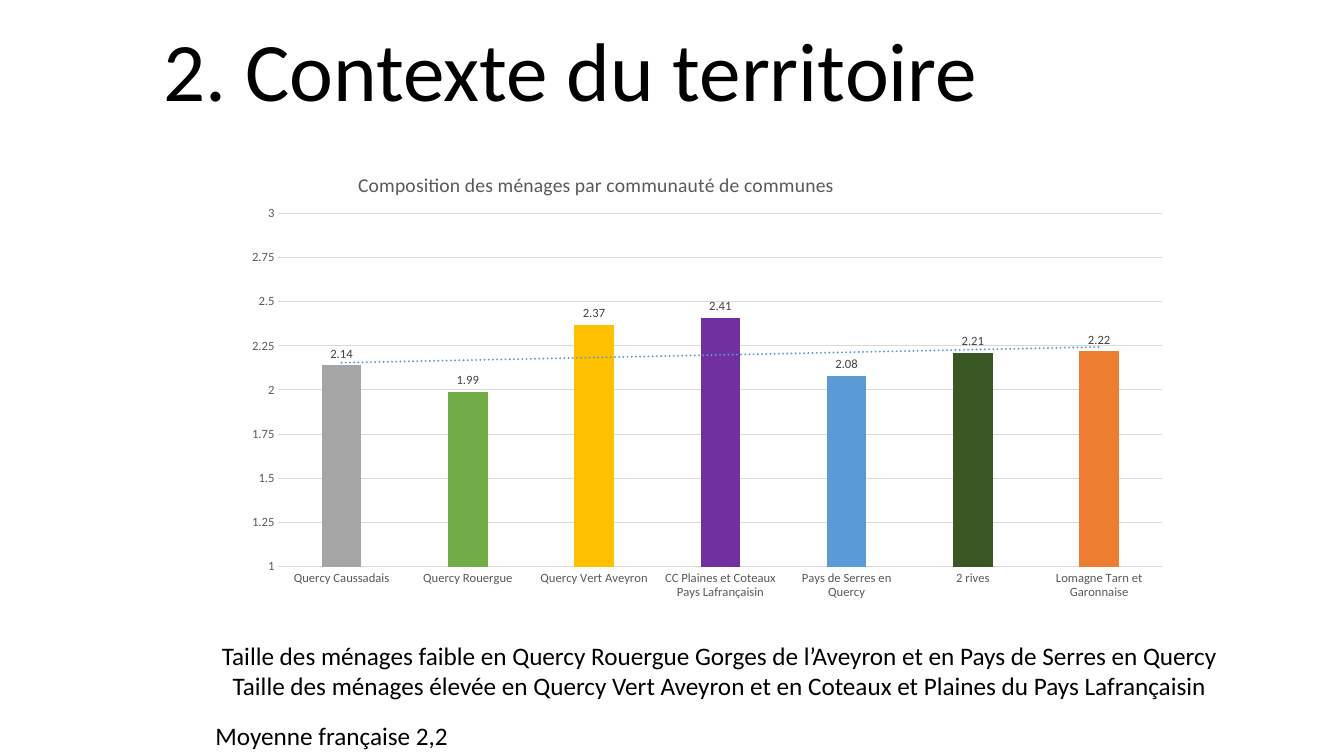
from lxml import etree
from pptx import Presentation
from pptx.chart.data import CategoryChartData
from pptx.dml.color import RGBColor
from pptx.enum.chart import XL_CHART_TYPE, XL_LABEL_POSITION, XL_TICK_MARK
from pptx.enum.text import MSO_ANCHOR, MSO_AUTO_SIZE, PP_ALIGN
from pptx.oxml import parse_xml
from pptx.oxml.ns import nsdecls, qn
from pptx.util import Cm, Pt

COLUMNS = XL_CHART_TYPE.COLUMN_CLUSTERED
OUTSIDE_END = XL_LABEL_POSITION.OUTSIDE_END
NO_TICK = XL_TICK_MARK.NONE
MIDDLE = MSO_ANCHOR.MIDDLE
NO_FIT = MSO_AUTO_SIZE.NONE
LEFT, CENTER = PP_ALIGN.LEFT, PP_ALIGN.CENTER

FONT = "Calibri"
BLACK, AXIS_TEXT, LABEL_TEXT, GRID, TREND = "000000", "595959", "404040", "D9D9D9", "5B9BD5"

TITLE = "2. Contexte du territoire"
CHART_TITLE = "Composition des ménages par communauté de communes"
HOUSEHOLDS = [
    ("Quercy Caussadais", 2.14, "A5A5A5"),
    ("Quercy Rouergue", 1.99, "70AD47"),
    ("Quercy Vert Aveyron", 2.37, "FFC000"),
    ("CC Plaines et Coteaux Pays Lafrançaisin", 2.41, "7030A0"),
    ("Pays de Serres en Quercy", 2.08, "5B9BD5"),
    ("2 rives", 2.21, "385723"),
    ("Lomagne Tarn et Garonnaise", 2.22, "ED7D31"),
]
FINDINGS = [
    "Taille des ménages faible en Quercy Rouergue Gorges de l’Aveyron et en Pays de Serres en Quercy",
    "Taille des ménages élevée en Quercy Vert Aveyron et en Coteaux et Plaines du Pays Lafrançaisin",
]
AVERAGE = ["Moyenne française 2,2"]

TITLE_BOX = (3.86, 0.56, 21.67, 2.64)
CHART_BOX = (5.82, 3.76, 23.95, 11.56)
FINDINGS_BOX = (4.19, 16, 28.19, 1.8)
AVERAGE_BOX = (5.18, 18.03, 6.48, 1.02)
TITLE_LAYOUT = {"x": 0.13, "y": 0.04}
PLOT_LAYOUT = {"x": 0.05, "y": 0.14, "w": 0.93, "h": 0.77}


def color(value):
    return RGBColor.from_string(value)


def lengths(box):
    return [Cm(value) for value in box]


def style_font(font, size, value):
    font.name, font.size, font.bold = FONT, Pt(size), False
    font.color.rgb = color(value)


def style_line(line, value):
    line.color.rgb = color(value)
    line.width = Pt(0.75)


def manual_layout(places, inner=False):
    layout = parse_xml(f"<c:layout {nsdecls('c')}><c:manualLayout/></c:layout>")
    settings = {"layoutTarget": "inner"} if inner else {}
    settings.update(xMode="edge", yMode="edge", **places)
    for name, value in settings.items():
        etree.SubElement(layout[0], qn(f"c:{name}")).set("val", str(value))
    return layout


def drop_layout(element):
    for layout in element.findall(qn("c:layout")):
        element.remove(layout)


def add_text(slide, box, lines, alignment):
    shape = slide.shapes.add_textbox(*lengths(box))
    frame = shape.text_frame
    frame.word_wrap = True
    frame.text = "\n".join(lines)
    for paragraph in frame.paragraphs:
        paragraph.alignment = alignment
        style_font(paragraph.font, 18, BLACK)
    return frame


def add_title(slide):
    title = slide.shapes.title
    title.left, title.top, title.width, title.height = lengths(TITLE_BOX)
    frame = title.text_frame
    frame.text = TITLE
    frame.auto_size = NO_FIT
    frame.vertical_anchor = MIDDLE
    paragraph = frame.paragraphs[0]
    paragraph.alignment = LEFT
    paragraph.line_spacing = 0.9
    style_font(paragraph.font, 59.4, BLACK)


def style_axes(chart):
    for axis in (chart.category_axis, chart.value_axis):
        axis.major_tick_mark = axis.minor_tick_mark = NO_TICK
        style_font(axis.tick_labels.font, 9, AXIS_TEXT)
    style_line(chart.category_axis.format.line, GRID)
    value_axis = chart.value_axis
    value_axis.minimum_scale, value_axis.maximum_scale = 1, 3
    value_axis.major_unit = 0.25
    value_axis.format.line.fill.background()
    style_line(value_axis.major_gridlines.format.line, GRID)


def style_columns(plot):
    plot.gap_width, plot.overlap = 219, -27
    plot.vary_by_categories = False
    series = plot.series[0]
    series.invert_if_negative = False
    for index, (_, _, value) in enumerate(HOUSEHOLDS):
        fill = series.points[index].format.fill
        fill.solid()
        fill.fore_color.rgb = color(value)
    labels = series.data_labels
    labels.show_value = True
    labels.position = OUTSIDE_END
    style_font(labels.font, 9, LABEL_TEXT)
    trend = parse_xml(
        f"<c:trendline {nsdecls('c', 'a')}><c:spPr><a:ln w='{Pt(1.5)}' cap='rnd'>"
        f"<a:solidFill><a:srgbClr val='{TREND}'/></a:solidFill><a:prstDash val='sysDot'/>"
        "</a:ln></c:spPr><c:trendlineType val='exp'/>"
        "<c:dispRSqr val='0'/><c:dispEq val='0'/></c:trendline>"
    )
    series._element.find(qn("c:cat")).addprevious(trend)


def add_household_chart(slide):
    data = CategoryChartData()
    data.categories = [name for name, _, _ in HOUSEHOLDS]
    data.add_series("Series 1", [size for _, size, _ in HOUSEHOLDS])
    chart = slide.shapes.add_chart(COLUMNS, *lengths(CHART_BOX), data).chart
    style_font(chart.font, 10, BLACK)
    chart.has_legend = False
    frame = chart.chart_title.text_frame
    frame.text = CHART_TITLE
    style_font(frame.paragraphs[0].font, 14, AXIS_TEXT)
    title = chart.chart_title._element
    drop_layout(title)
    title.find(qn("c:tx")).addnext(manual_layout(TITLE_LAYOUT))
    plot_area = chart._chartSpace.chart.plotArea
    drop_layout(plot_area)
    plot_area.insert(0, manual_layout(PLOT_LAYOUT, inner=True))
    style_axes(chart)
    style_columns(chart.plots[0])


def main():
    presentation = Presentation()
    presentation.slide_width, presentation.slide_height = Cm(33.87), Cm(19.05)
    slide = presentation.slides.add_slide(presentation.slide_layouts[5])
    add_title(slide)
    add_household_chart(slide)
    findings = add_text(slide, FINDINGS_BOX, FINDINGS, CENTER)
    findings.paragraphs[0]._p.get_or_add_pPr().set("marR", str(Cm(0.3)))
    add_text(slide, AVERAGE_BOX, AVERAGE, LEFT)
    presentation.save("out.pptx")


if __name__ == "__main__":
    main()
